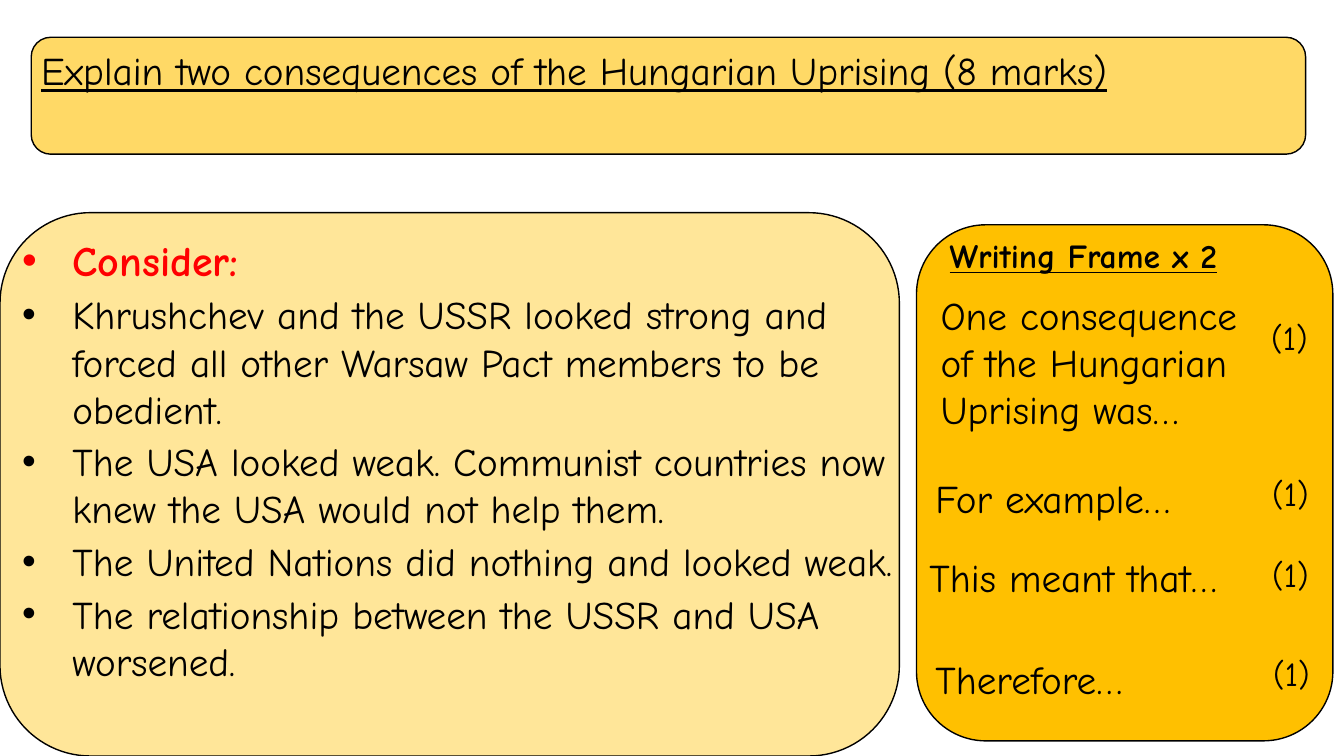
from lxml import etree
from pptx import Presentation
from pptx.dml.color import RGBColor
from pptx.enum.shapes import MSO_SHAPE
from pptx.enum.text import MSO_AUTO_SIZE
from pptx.oxml.ns import qn
from pptx.util import Inches, Pt

ROUNDED = MSO_SHAPE.ROUNDED_RECTANGLE
GROW = MSO_AUTO_SIZE.SHAPE_TO_FIT_TEXT
FONT = "Comic Neue"
BLACK = "000000"
RED = "FF0000"

CONSEQUENCES = [
    "Khrushchev and the USSR looked strong and forced all other Warsaw Pact "
    "members to be obedient.",
    "The USA looked weak. Communist countries now knew the USA would not help them.",
    "The United Nations did nothing and looked weak.",
    "The relationship between the USSR and USA worsened.",
]

SENTENCE_STARTERS = [
    ("One consequence of the Hungarian Uprising was…", (9.23, 2.84, 3.49, 1.51), 1, (12.51, 3.09)),
    ("For example…", (9.18, 4.59, 3.68, 0.61), 1.15, (12.52, 4.64)),
    ("This meant that…", (9.12, 5.44, 3.71, 0.57), 1, (12.52, 5.45)),
    ("Therefore…", (9.18, 6.38, 3.53, 0.61), 1.15, (12.53, 6.43)),
]


def color(value):
    return RGBColor.from_string(value)


def add_panel(s, box, fill):
    sp = s.shapes.add_shape(ROUNDED, *map(Inches, box))
    sp.shadow.inherit = False
    sp.fill.solid()
    sp.fill.fore_color.rgb = color(fill)
    sp.line.color.rgb = color(BLACK)
    sp.line.width = Pt(1)


def add_frame(s, box):
    tf = s.shapes.add_textbox(*map(Inches, box)).text_frame
    tf.word_wrap = True
    tf.auto_size = GROW
    return tf


def write(p, text, size, fill=BLACK, bold=False, underline=False):
    p.text = text
    p.font.name = FONT
    p.font.size = Pt(size)
    p.font.color.rgb = color(fill)
    p.font.bold = bold
    p.font.underline = underline


def add_text(s, box, text, size, spacing=1, **style):
    p = add_frame(s, box).paragraphs[0]
    write(p, text, size, **style)
    p.line_spacing = spacing


def add_bullet(p):
    p.space_before = Pt(4)
    pPr = p._p.get_or_add_pPr()
    pPr.set("marL", str(Inches(0.5)))
    pPr.set("indent", str(-Inches(0.5)))
    bullet_font = etree.Element(qn("a:buFont"), typeface="Arial")
    bullet = etree.Element(qn("a:buChar"), char="•")
    pPr.find(qn("a:spcBef")).addnext(bullet_font)
    bullet_font.addnext(bullet)


def add_consider_list(s, box):
    tf = add_frame(s, box)
    p = tf.paragraphs[0]
    write(p, "Consider:", 30, fill=RED, bold=True)
    add_bullet(p)
    for text in CONSEQUENCES:
        p = tf.add_paragraph()
        write(p, text, 28)
        add_bullet(p)


def add_writing_frame(s):
    add_panel(s, (9.09, 2.23, 4.13, 5.12), "FFC000")
    add_text(s, (9.32, 2.28, 3.68, 0.5), "Writing Frame x 2", 24, bold=True, underline=True)
    for text, box, spacing, mark_at in SENTENCE_STARTERS:
        add_text(s, box, text, 28, spacing)
        add_text(s, (*mark_at, 0.67, 0.5), "(1)", 24)


def main():
    prs = Presentation()
    prs.slide_width = Inches(13.33)
    prs.slide_height = Inches(7.5)
    s = prs.slides.add_slide(prs.slide_layouts[6])

    add_panel(s, (0.31, 0.37, 12.64, 1.16), "FFD966")
    add_writing_frame(s)
    add_panel(s, (0, 2.11, 8.92, 5.39), "FFE699")
    add_text(s, (0.31, 0.41, 12.64, 0.57),
             "Explain two consequences of the Hungarian Uprising (8 marks)", 28, underline=True)
    add_consider_list(s, (0.12, 2.28, 8.89, 5.07))

    prs.save("out.pptx")


if __name__ == "__main__":
    main()
